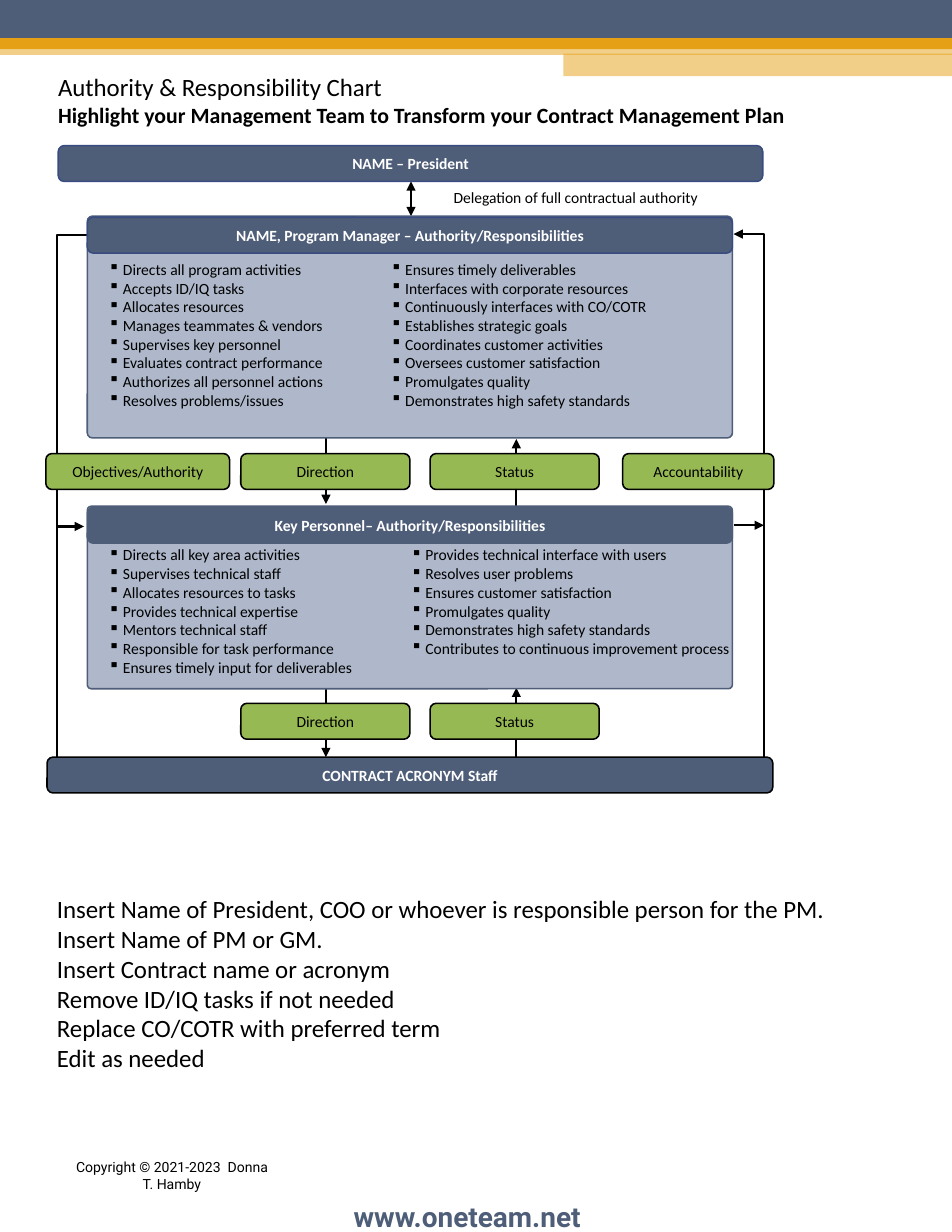
from typing import NamedTuple

from pptx import Presentation
from pptx import util as u
from pptx.dml.color import RGBColor
from pptx.enum import shapes, text
from pptx.oxml import parse_xml
from pptx.oxml.ns import nsdecls, qn

HUES = {"navy": "4E5D78", "gold": "E6A015", "pale": "AEB8CA", "edge": "384C81",
        "green": "97B953", "black": "000000", "white": "FFFFFF"}
BODY = {"name": "Calibri", "size": u.Pt(10), "bold": False}
HEAD = BODY | {"bold": True}
BIG = BODY | {"size": u.Pt(16)}
SUB = BODY | {"size": u.Pt(14), "bold": True}
NOTE = {"name": "Roboto", "size": u.Pt(9), "bold": False}
SITE = {"name": "Roboto", "size": u.Pt(18), "bold": True}
MID = text.PP_ALIGN.CENTER
BAR = 0.32
DOWN, UP = 2.91, 4.61


class Band(NamedTuple):
    x: float
    y: float
    w: float
    h: float
    clear: bool


class Box(NamedTuple):
    x: float
    y: float
    w: float
    h: float
    fill: str | None
    line: str | None
    label: str = ""
    ink: str = "black"
    round: float = 0.1667
    pad: float = 0.08


class Wire(NamedTuple):
    x1: float
    y1: float
    x2: float
    y2: float
    ends: tuple[str, ...]
    bend: int | None = None


class Note(NamedTuple):
    x: float
    y: float
    w: float
    h: float
    lines: list[str]
    fonts: list[dict]
    ink: str = "black"
    tab: float | None = None
    align: text.PP_ALIGN | None = None
    wrap: bool = True


def color(name: str) -> RGBColor:
    return RGBColor.from_string(HUES[name])


def tag(name: str, attrs: str = "", body: str = ""):
    return parse_xml(f'<a:{name} {nsdecls("a")} {attrs}>{body}</a:{name}>')


def style(font, form: dict, ink: str) -> None:
    for key, val in form.items():
        setattr(font, key, val)
    font.color.rgb = color(ink)


def add_band(slide, band: Band) -> None:
    shape = slide.shapes.add_shape(
        shapes.MSO_SHAPE.RECTANGLE, *map(u.Inches, band[:4]))
    shape.shadow.inherit = False
    shape.line.fill.background()
    shape.fill.solid()
    shape.fill.fore_color.rgb = color("navy" if band.y == 0 else "gold")
    if band.clear:
        hue = shape.fill._xPr.find(".//" + qn("a:srgbClr"))
        hue.append(tag("alpha", 'val="50000"'))


def add_box(slide, box: Box) -> None:
    shape = slide.shapes.add_shape(
        shapes.MSO_SHAPE.ROUNDED_RECTANGLE, *map(u.Inches, box[:4]))
    shape.shadow.inherit = False
    shape.adjustments[0] = box.round
    for part, hue in ((shape.fill, box.fill), (shape.line.fill, box.line)):
        if hue:
            part.solid()
            part.fore_color.rgb = color(hue)
        else:
            part.background()
    if box.line:
        shape.line.width = u.Pt(1)
    if not box.label:
        return
    frame = shape.text_frame
    pads = {"left": box.pad, "right": box.pad, "top": 0.04, "bottom": 0.04}
    for side, pad in pads.items():
        setattr(frame, f"margin_{side}", u.Inches(pad))
    frame.vertical_anchor = text.MSO_ANCHOR.MIDDLE
    para = frame.paragraphs[0]
    para.text, para.alignment = box.label, MID
    style(para.runs[0].font, HEAD if box.ink == "white" else BODY, box.ink)


def add_wire(slide, wire: Wire) -> None:
    """Draw a line; bend is the elbow's place in percent of its width."""
    kind = shapes.MSO_CONNECTOR
    line = slide.shapes.add_connector(
        kind.STRAIGHT if wire.bend is None else kind.ELBOW,
        *map(u.Inches, wire[:4]))
    line.line.color.rgb = color("black")
    line.line.width = u.Pt(1.5)
    props = line._element.spPr
    if wire.bend is not None:
        geom = props.find(qn("a:prstGeom"))
        geom.get_or_add_avLst().append(
            tag("gd", f'name="adj1" fmla="val {wire.bend * 1000}"'))
    for end in wire.ends:
        line.line._get_or_add_ln().append(tag(end, 'type="triangle"'))
    props.append(tag("effectLst"))


def add_note(slide, note: Note) -> None:
    shape = slide.shapes.add_textbox(*map(u.Inches, note[:4]))
    frame = shape.text_frame
    frame.word_wrap = note.wrap
    if note.align:
        frame.vertical_anchor = text.MSO_ANCHOR.MIDDLE
    for i, words in enumerate(note.lines):
        para = frame.paragraphs[0] if i == 0 else frame.add_paragraph()
        para.text, para.alignment = words, note.align
        if note.tab:
            props = para._p.get_or_add_pPr()
            dent = u.Inches(0.13)
            props.set("marL", str(dent))
            props.set("indent", str(-dent))
            props.append(tag("buChar", 'char="▪"'))
            stop = f'<a:tab pos="{u.Inches(note.tab)}" algn="l"/>'
            props.append(tag("tabLst", body=stop))
        style(para.runs[0].font, note.fonts[min(i, len(note.fonts) - 1)], note.ink)


BANDS = [Band(0, 0.4, 8.5, 0.09, True), Band(0, 0, 8.5, 0.34, False),
         Band(0, 0.34, 8.5, 0.1, False), Band(5.03, 0.48, 3.47, 0.2, True)]

WIRES = [
    Wire(0.8, 2.1, 0.51, 6.99, ("tailEnd",), 100),
    Wire(6.82, 6.99, 6.55, 2.09, ("tailEnd",), 0),
    Wire(3.67, 1.62, 3.67, 1.93, ("headEnd", "tailEnd")),
    Wire(0.5, 4.7, 0.75, 4.7, ("tailEnd",)),
    Wire(6.55, 4.69, 6.82, 4.69, ("tailEnd",)),
    Wire(DOWN, 3.91, DOWN, 4.5, ("tailEnd",)),
    Wire(UP, 3.92, UP, 4.54, ("headEnd",)),
    Wire(DOWN, 6.14, DOWN, 6.76, ("tailEnd",)),
    Wire(UP, 6.14, UP, 6.76, ("headEnd",)),
]

BOXES = [
    Box(0.78, 1.93, 5.76, 1.98, "pale", "navy", round=0.023),
    Box(0.78, 1.94, 5.76, BAR, "navy", "edge",
        "NAME, Program Manager – Authority/Responsibilities", "white"),
    Box(0.78, 4.52, 5.76, 1.63, "pale", "navy", round=0.022),
    Box(0.78, 4.53, 5.76, BAR, "navy", "navy",
        "Key Personnel– Authority/Responsibilities", "white"),
    Box(0.52, 1.3, 6.29, BAR, "navy", "edge", "NAME – President", "white"),
    Box(3.64, 1.65, 3, 0.23, None, None, "Delegation of full contractual authority"),
    Box(0.42, 6.76, 6.48, BAR, "navy", "black", "CONTRACT ACRONYM Staff", "white"),
    Box(0.41, 4.05, 1.64, BAR, "green", "black", "Objectives/Authority", pad=0),
    Box(5.56, 4.05, 1.35, BAR, "green", "black", "Accountability"),
    *(Box(x, y, 1.51, BAR, "green", "black", label) for y in (4.05, 6.28)
      for x, label in ((2.15, "Direction"), (3.84, "Status"))),
]

NOTES = [
    Note(0.87, 2.27, 2.7, 1.45, [
        "Directs all program activities", "Accepts ID/IQ tasks",
        "Allocates resources", "Manages teammates & vendors",
        "Supervises key personnel", "Evaluates contract performance",
        "Authorizes all personnel actions", "Resolves problems/issues"], [BODY], tab=0.08),
    Note(3.39, 2.27, 3.24, 1.45, [
        "Ensures timely deliverables", "Interfaces with corporate resources",
        "Continuously interfaces with CO/COTR", "Establishes strategic goals",
        "Coordinates customer activities", "Oversees customer satisfaction",
        "Promulgates quality", "Demonstrates high safety standards"], [BODY], tab=0.08),
    Note(0.87, 4.82, 2.7, 1.28, [
        "Directs all key area activities", "Supervises technical staff",
        "Allocates resources to tasks", "Provides technical expertise",
        "Mentors technical staff", "Responsible for task performance",
        "Ensures timely input for deliverables"], [BODY], tab=0.13),
    Note(3.57, 4.82, 3.06, 1.28, [
        "Provides technical interface with users", "Resolves user problems",
        "Ensures customer satisfaction", "Promulgates quality",
        "Demonstrates high safety standards",
        "Contributes to continuous improvement process"], [BODY], tab=0.08),
    Note(0.41, 7.93, 7.38, 2.03, [
        "Insert Name of President, COO or whoever is responsible person for the PM.",
        "Insert Name of PM or GM.", "Insert Contract name or acronym",
        "Remove ID/IQ tasks if not needed", "Replace CO/COTR with preferred term",
        "Edit as needed"], [BIG]),
    Note(0.42, 0.59, 7.38, 0.97, [
        "Authority & Responsibility Chart",
        "Highlight your Management Team to Transform your Contract Management Plan"],
        [BIG, SUB]),
    Note(0.58, 10.2, 1.91, 0.59, ["Copyright © 2021-2023  Donna T. Hamby"],
         [NOTE], align=MID),
    Note(3.06, 10.66, 2.37, 0.4, ["www.oneteam.net"], [SITE], "navy", wrap=False),
]


def main() -> None:
    deck = Presentation()
    deck.slide_width, deck.slide_height = u.Inches(8.5), u.Inches(11)
    slide = deck.slides.add_slide(deck.slide_layouts[6])
    for draw, items in ((add_band, BANDS), (add_wire, WIRES),
                        (add_box, BOXES), (add_note, NOTES)):
        for item in items:
            draw(slide, item)
    deck.save("out.pptx")


if __name__ == "__main__":
    main()
